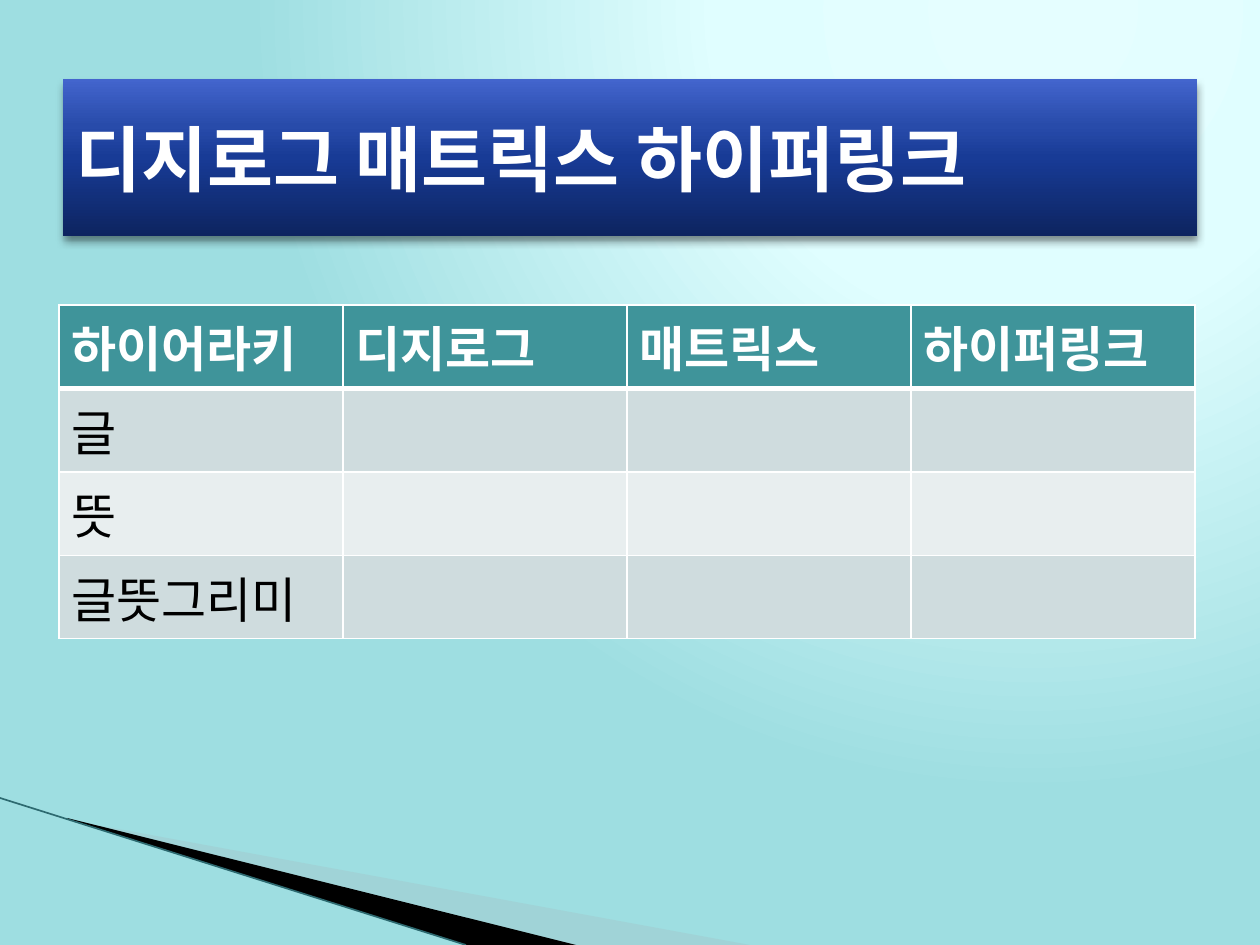
from dataclasses import dataclass

from pptx import Presentation
from pptx.dml.color import RGBColor
from pptx.enum.text import MSO_ANCHOR, MSO_AUTO_SIZE, PP_ALIGN
from pptx.oxml import parse_xml
from pptx.oxml.ns import qn
from pptx.util import Pt

TITLE = "디지로그 매트릭스 하이퍼링크"
ROWS = [
    ["하이어라키", "디지로그", "매트릭스", "하이퍼링크"],
    ["글", "", "", ""],
    ["뜻", "", "", ""],
    ["글뜻그리미", "", "", ""],
]

PX = 914400 / 126
WIDTH, HEIGHT = 1260, 945
TITLE_BOX = (63, 79, 1134, 157)
TABLE_AT = (59, 305)
COL_W, ROW_H = 284, 83
PALE_WEDGE = [(69, 820), (750, 945), (575, 945), (69, 819)]
BLACK_WEDGE = [(67, 818), (576, 945), (466, 945), (68, 819)]
EDGE = (0, 798, 466, 945)

NS = 'xmlns:a="http://schemas.openxmlformats.org/drawingml/2006/main"'


@dataclass(frozen=True)
class Theme:
    font: str = "Courier New"
    title_size: int = 41
    table_size: int = 28
    white: str = "FFFFFF"
    black: str = "000000"
    header: str = "3F949A"
    bands: tuple = ("CFDCDE", "E8EEEF")
    wedge: str = "A4C4C8"
    edge: str = "2D6A70"
    backdrop: tuple = ((0, "E5FEFF"), (40, "E0FEFF"), (100, "9EDEE1"))
    banner: tuple = ((0, "0D2460"), (50, "183B96"), (70, "284BAA"), (100, "4365CD"))


T = Theme()


def emu(*lengths):
    return [round(n * PX) for n in lengths]


def rgb(color):
    return RGBColor.from_string(color)


def set_text(tf, text, size, color, bold=False):
    p = tf.paragraphs[0]
    p.alignment = PP_ALIGN.LEFT
    p.font.size = Pt(size)
    if text:
        r = p.add_run()
        r.text = text
        r.font.name = T.font
        r.font.size = Pt(size)
        r.font.bold = bold
        r.font.color.rgb = rgb(color)


def gradient(stops, direction):
    gs = "".join(
        f'<a:gs pos="{pos * 1000}"><a:srgbClr val="{color}"/></a:gs>'
        for pos, color in stops
    )
    return parse_xml(
        f'<a:gradFill {NS} rotWithShape="1"><a:gsLst>{gs}</a:gsLst>{direction}</a:gradFill>'
    )


def add_background(slide):
    fill = slide.background.fill
    fill.solid()
    solid = slide.element.find(".//" + qn("p:bgPr")).find(qn("a:solidFill"))
    circle = ('<a:path path="circle">'
              '<a:fillToRect l="65000" t="0" r="0" b="98000"/></a:path>')
    solid.getparent().replace(solid, gradient(T.backdrop, circle))


def add_wedge(slide, points, color, alpha=100):
    fb = slide.shapes.build_freeform(*points[0], scale=PX)
    fb.add_line_segments(points[1:], close=True)
    s = fb.convert_to_shape()
    s.shadow.inherit = False
    s.line.fill.background()
    s.fill.solid()
    s.fill.fore_color.rgb = rgb(color)
    if alpha < 100:
        clr = s.element.spPr.find(qn("a:solidFill"))[0]
        clr.append(parse_xml(f'<a:alpha {NS} val="{alpha * 1000}"/>'))


def add_edge(slide):
    x1, y1, x2, y2 = emu(*EDGE)
    line = slide.shapes.add_connector(1, x1, y1, x2, y2)
    line.line.color.rgb = rgb(T.edge)
    line.line.width = Pt(0.95)
    line.element.spPr.append(parse_xml(f"<a:effectLst {NS}/>"))


def add_title(slide):
    s = slide.shapes.title
    s.left, s.top, s.width, s.height = emu(*TITLE_BOX)
    spPr = s.element.spPr
    spPr.append(gradient(T.banner, '<a:lin ang="16200000" scaled="0"/>'))
    spPr.append(parse_xml(
        f'<a:effectLst {NS}><a:outerShdw blurRad="{Pt(5)}" dist="{Pt(3)}" '
        f'dir="5400000" rotWithShape="0"><a:srgbClr val="{T.black}">'
        '<a:alpha val="45000"/></a:srgbClr></a:outerShdw></a:effectLst>'))
    tf = s.text_frame
    tf.word_wrap = True
    tf.auto_size = MSO_AUTO_SIZE.NONE
    tf.vertical_anchor = MSO_ANCHOR.MIDDLE
    set_text(tf, TITLE, T.title_size, T.white, bold=True)


def add_borders(cell, **widths):
    tcPr = cell._tc.get_or_add_tcPr()
    for i, side in enumerate("LRTB"):
        tcPr.insert(i, parse_xml(
            f'<a:ln{side} {NS} w="{Pt(widths.get(side, 1))}"><a:solidFill>'
            f'<a:srgbClr val="{T.white}"/></a:solidFill></a:ln{side}>'))


def add_table(slide):
    n_rows, n_cols = len(ROWS), len(ROWS[0])
    box = emu(*TABLE_AT, COL_W * n_cols, ROW_H * n_rows)
    table = slide.shapes.add_table(n_rows, n_cols, *box).table
    for i, row in enumerate(ROWS):
        head = i == 0
        for j, text in enumerate(row):
            cell = table.cell(i, j)
            cell.fill.solid()
            cell.fill.fore_color.rgb = rgb(T.header if head else T.bands[(i - 1) % 2])
            add_borders(cell, T=3 if i == 1 else 1, B=3 if head else 1)
            set_text(cell.text_frame, text, T.table_size,
                     T.white if head else T.black, bold=head)


def main():
    prs = Presentation()
    prs.slide_width, prs.slide_height = emu(WIDTH, HEIGHT)
    slide = prs.slides.add_slide(prs.slide_layouts[5])
    add_background(slide)
    add_wedge(slide, PALE_WEDGE, T.wedge, alpha=40)
    add_wedge(slide, BLACK_WEDGE, T.black)
    add_edge(slide)
    add_table(slide)
    add_title(slide)
    prs.save("out.pptx")


if __name__ == "__main__":
    main()
